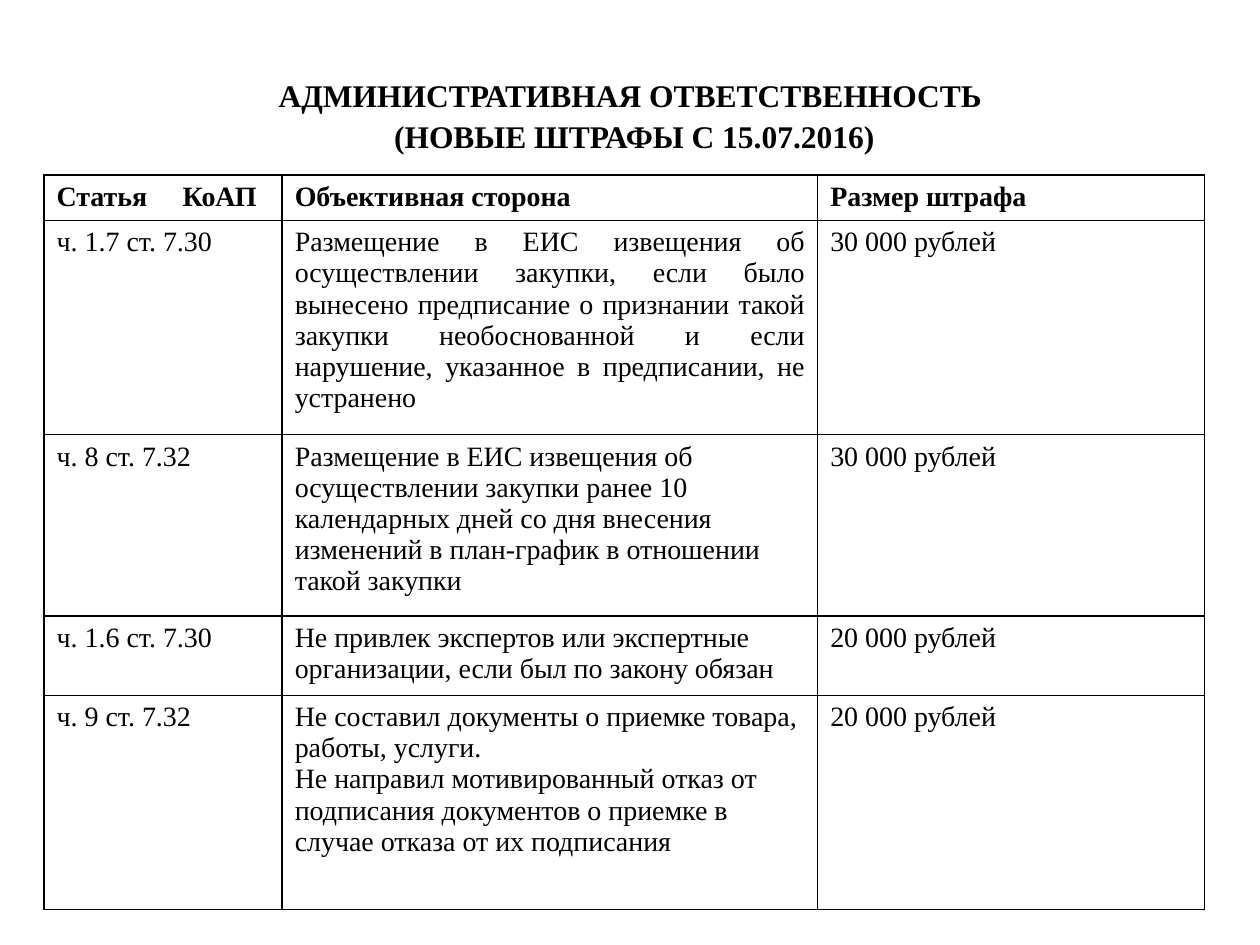
"""Build a slide with a table of new administrative fines."""
import pptx
import pptx.dml.color
import pptx.enum.text
import pptx.oxml
import pptx.oxml.ns
import pptx.util

Inches = pptx.util.Inches
Pt = pptx.util.Pt
ALIGN = pptx.enum.text.PP_ALIGN
ANCHOR = pptx.enum.text.MSO_ANCHOR

BLACK = pptx.dml.color.RGBColor(0, 0, 0)
FONT = "Times New Roman"
TITLE = ["АДМИНИСТРАТИВНАЯ ОТВЕТСТВЕННОСТЬ ", "(НОВЫЕ ШТРАФЫ С 15.07.2016)"]
HEADER = ("Статья \tКоАП", "Объективная сторона", "Размер штрафа")
FINES = [
    ("ч. 1.7 ст. 7.30",
     "Размещение в ЕИС извещения об осуществлении закупки, если было вынесено "
     "предписание о признании такой закупки необоснованной и если нарушение, "
     "указанное в предписании, не устранено",
     "30 000 рублей"),
    ("ч. 8 ст. 7.32",
     "Размещение в ЕИС извещения об осуществлении закупки ранее 10 календарных "
     "дней со дня внесения изменений в план-график в отношении такой закупки",
     "30 000 рублей"),
    ("ч. 1.6 ст. 7.30",
     "Не привлек экспертов или экспертные организации, если был по закону обязан",
     "20 000 рублей"),
    ("ч. 9 ст. 7.32",
     "Не составил документы о приемке товара, работы, услуги.\n"
     "Не направил мотивированный отказ от подписания документов о приемке "
     "в случае отказа от их подписания",
     "20 000 рублей"),
]
COLUMN_WIDTHS = [1.89, 4.25, 3.07]
ROW_HEIGHTS = [0.36, 1.7, 1.44, 0.63, 1.7]
JUSTIFIED_CELL = (1, 1)


def write(text_frame, lines, size, bold, alignment, spacing=None):
    for index, line in enumerate(lines):
        paragraph = text_frame.paragraphs[0] if index == 0 else text_frame.add_paragraph()
        paragraph.alignment = alignment
        paragraph.line_spacing = spacing
        run = paragraph.add_run()
        run.text = line
        run.font.name = FONT
        run.font.size = Pt(size)
        run.font.bold = bold
        run.font.color.rgb = BLACK


def add_borders(cell):
    properties = cell._tc.get_or_add_tcPr()
    for position, side in enumerate(("lnL", "lnR", "lnT", "lnB")):
        border = pptx.oxml.parse_xml(
            f'<a:{side} {pptx.oxml.ns.nsdecls("a")} w="{Pt(1)}"><a:solidFill>'
            f'<a:srgbClr val="{BLACK}"/></a:solidFill></a:{side}>')
        properties.insert(position, border)


def add_title(slide):
    title = slide.shapes.title
    title.left, title.top = Inches(0.35), Inches(0.52)
    title.width, title.height = Inches(9.37), Inches(0.71)
    title.text_frame.word_wrap = True
    title.text_frame.auto_size = pptx.enum.text.MSO_AUTO_SIZE.NONE
    title.text_frame.vertical_anchor = ANCHOR.TOP
    write(title.text_frame, TITLE, 18, True, ALIGN.CENTER, 1.1)


def add_fines_table(slide):
    rows = [HEADER] + FINES
    table = slide.shapes.add_table(
        len(rows), len(HEADER), Inches(0.35), Inches(1.39),
        Inches(sum(COLUMN_WIDTHS)), Inches(sum(ROW_HEIGHTS))).table
    table.horz_banding = False
    for column, width in zip(table.columns, COLUMN_WIDTHS):
        column.width = Inches(width)
    for row, height in zip(table.rows, ROW_HEIGHTS):
        row.height = Inches(height)
    for row_index, texts in enumerate(rows):
        for column_index, text in enumerate(texts):
            cell = table.cell(row_index, column_index)
            cell.fill.background()
            add_borders(cell)
            justified = (row_index, column_index) == JUSTIFIED_CELL
            alignment = ALIGN.JUSTIFY if justified else ALIGN.LEFT
            write(cell.text_frame, text.split("\n"), 16, row_index == 0, alignment)


def main():
    presentation = pptx.Presentation()
    presentation.slide_width, presentation.slide_height = Inches(10), Inches(7.5)
    slide = presentation.slides.add_slide(presentation.slide_layouts[5])
    add_title(slide)
    add_fines_table(slide)
    presentation.save("out.pptx")


if __name__ == "__main__":
    main()
